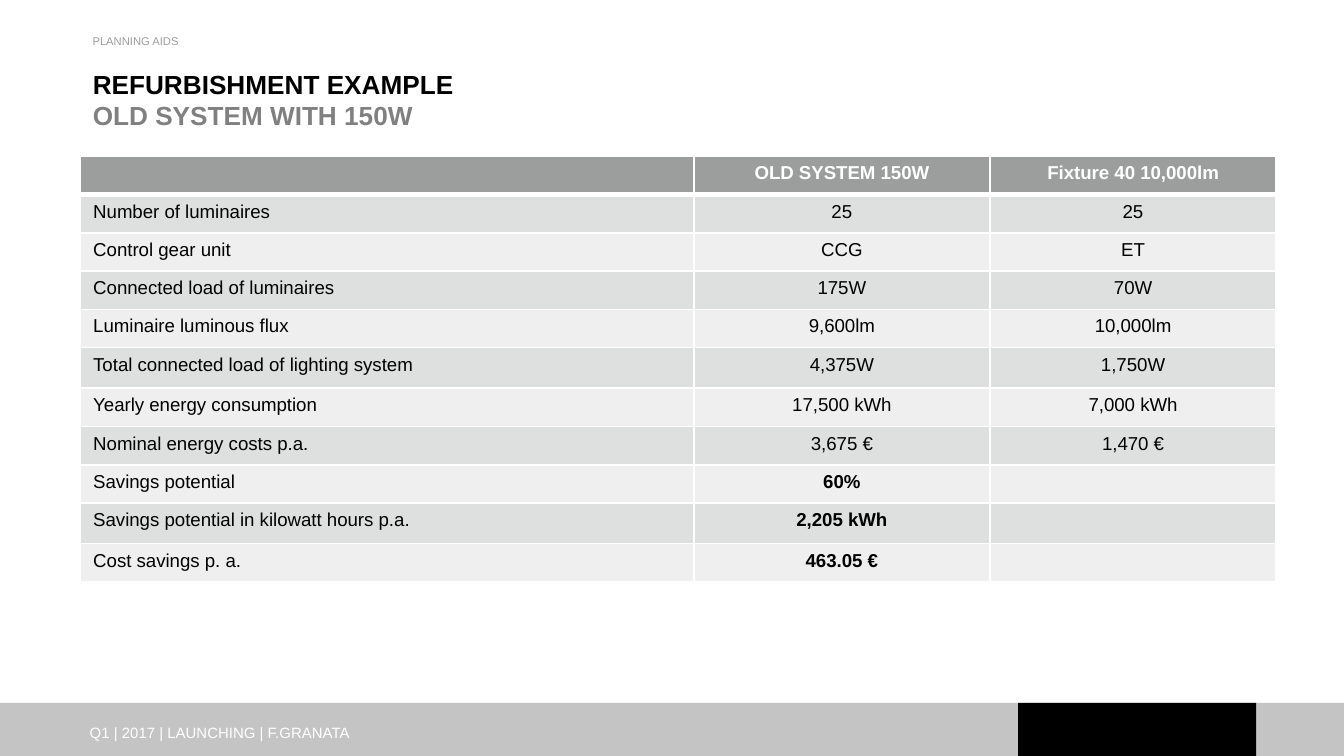
from lxml.etree import SubElement
from pptx import Presentation
from pptx.dml.color import RGBColor
from pptx.enum.shapes import MSO_SHAPE
from pptx.enum.text import MSO_ANCHOR, MSO_AUTO_SIZE, PP_ALIGN
from pptx.oxml.ns import qn
from pptx.util import Pt

FONT = "Arial"
BLACK = RGBColor(0x00, 0x00, 0x00)
WHITE = RGBColor(0xFF, 0xFF, 0xFF)
SUBTITLE_GRAY = RGBColor(0x80, 0x80, 0x80)
HEADER_GRAY = RGBColor(0x9C, 0x9D, 0x9D)
FOOTER_GRAY = RGBColor(0xC4, 0xC4, 0xC4)
BANDS = (RGBColor(0xDE, 0xDF, 0xDF), RGBColor(0xEF, 0xEF, 0xEF))

COLUMNS = (329, 158.5, 153.5)
ROW_HEIGHT, TALL_ROW_HEIGHT = 20.5, 21.75
TALL_ROWS = (5, 9)
ROWS = (
    ("", "OLD SYSTEM 150W", "Fixture 40 10,000lm"),
    ("Number of luminaires", "25", "25"),
    ("Control gear unit", "CCG", "ET"),
    ("Connected load of luminaires", "175W", "70W"),
    ("Luminaire luminous flux", "9,600lm", "10,000lm"),
    ("Total connected load of lighting system", "4,375W", "1,750W"),
    ("Yearly energy consumption", "17,500 kWh", "7,000 kWh"),
    ("Nominal energy costs p.a.", "3,675 €", "1,470 €"),
    ("Savings potential", "60%", ""),
    ("Savings potential in kilowatt hours p.a.", "2,205 kWh", ""),
    ("Cost savings p. a.", "463.05 €", ""),
)
FIRST_SAVINGS_ROW = 8


def add_text(p, text, size, color, bold=False):
    """Append a formatted run to a paragraph."""
    r = p.add_run()
    r.text = text
    for name, value in {"name": FONT, "size": Pt(size), "bold": bold}.items():
        setattr(r.font, name, value)
    r.font.color.rgb = color


def format_frame(tf):
    """Make a text frame wrap from the top at a fixed size."""
    values = {
        "word_wrap": True,
        "auto_size": MSO_AUTO_SIZE.NONE,
        "vertical_anchor": MSO_ANCHOR.TOP,
        "margin_left": Pt(7.2),
        "margin_right": Pt(7.2),
        "margin_top": Pt(3.6),
        "margin_bottom": Pt(3.6),
    }
    for name, value in values.items():
        setattr(tf, name, value)


def add_label(slide, text, size, color, left, top, width, height):
    """Add a one-line text box."""
    tf = slide.shapes.add_textbox(Pt(left), Pt(top), Pt(width), Pt(height)).text_frame
    format_frame(tf)
    add_text(tf.paragraphs[0], text, size, color)


def add_bar(slide, color, left, top, width, height):
    """Add a plain filled rectangle."""
    sp = slide.shapes.add_shape(
        MSO_SHAPE.RECTANGLE, Pt(left), Pt(top), Pt(width), Pt(height))
    sp.shadow.inherit = False
    sp.fill.solid()
    sp.fill.fore_color.rgb = color
    sp.line.fill.background()


def add_footer(slide, left, top, width, height):
    """Add the footer band, its block and its text."""
    add_bar(slide, FOOTER_GRAY, left, top, width, height)
    add_bar(slide, BLACK, left + 545.5, top, 127.5, height)
    add_label(slide, "Q1 | 2017 | LAUNCHING | F.GRANATA", 8, WHITE,
              left + 41, top + 7.5, 205, 15)


def add_heading(slide, left, top, width, height):
    """Add the section label and the two-line title."""
    add_label(slide, "PLANNING AIDS", 6, HEADER_GRAY, left, top, width, 17)
    title = slide.shapes.title
    box = {"left": left, "top": top + 18, "width": width, "height": height - 18}
    for name, value in box.items():
        setattr(title, name, Pt(value))
    format_frame(title.text_frame)
    p = title.text_frame.paragraphs[0]
    p.alignment = PP_ALIGN.LEFT
    add_text(p, "REFURBISHMENT EXAMPLE", 14, BLACK, True)
    p.add_line_break()
    add_text(p, "OLD SYSTEM WITH 150W", 14, SUBTITLE_GRAY, True)


def set_borders(cell, bottom):
    """Draw white cell borders, ahead of the fill in the cell properties."""
    tc_pr = cell._tc.get_or_add_tcPr()
    for side, width in {"L": 1, "R": 1, "T": 1, "B": bottom}.items():
        ln = SubElement(tc_pr, qn(f"a:ln{side}"), w=str(Pt(width)))
        fill = SubElement(ln, qn("a:solidFill"))
        SubElement(fill, qn("a:srgbClr"), val=str(WHITE))


def fill_cell(cell, text, row, col):
    """Format one table cell by its row and column."""
    header = row == 0
    set_borders(cell, 3 if header else 1)
    cell.fill.solid()
    cell.fill.fore_color.rgb = HEADER_GRAY if header else BANDS[(row - 1) % 2]
    p = cell.text_frame.paragraphs[0]
    p.alignment = PP_ALIGN.CENTER if col else PP_ALIGN.LEFT
    if text:
        bold = header or (col > 0 and row >= FIRST_SAVINGS_ROW)
        add_text(p, text, 10, WHITE if header else BLACK, bold)
    else:
        SubElement(p._p, qn("a:endParaRPr"), sz="1000")


def add_comparison(slide, left, top, width, height):
    """Add the table comparing the old and new systems."""
    table = slide.shapes.add_table(
        len(ROWS), len(COLUMNS), Pt(left), Pt(top), Pt(width), Pt(height)).table
    table.horz_banding = False
    for column, column_width in zip(table.columns, COLUMNS):
        column.width = Pt(column_width)
    for row, texts in enumerate(ROWS):
        table.rows[row].height = Pt(TALL_ROW_HEIGHT if row in TALL_ROWS else ROW_HEIGHT)
        for col, text in enumerate(texts):
            fill_cell(table.cell(row, col), text, row, col)


def main():
    """Build and save the slide."""
    prs = Presentation()
    prs.slide_width, prs.slide_height = Pt(720), Pt(405)
    slide = prs.slides.add_slide(prs.slide_layouts[5])
    add_footer(slide, 0, 376.5, 720, 28.5)
    add_heading(slide, 42.5, 15, 629.5, 86)
    add_comparison(slide, 42.75, 83.75, sum(COLUMNS), 228)
    prs.save("out.pptx")


if __name__ == "__main__":
    main()
